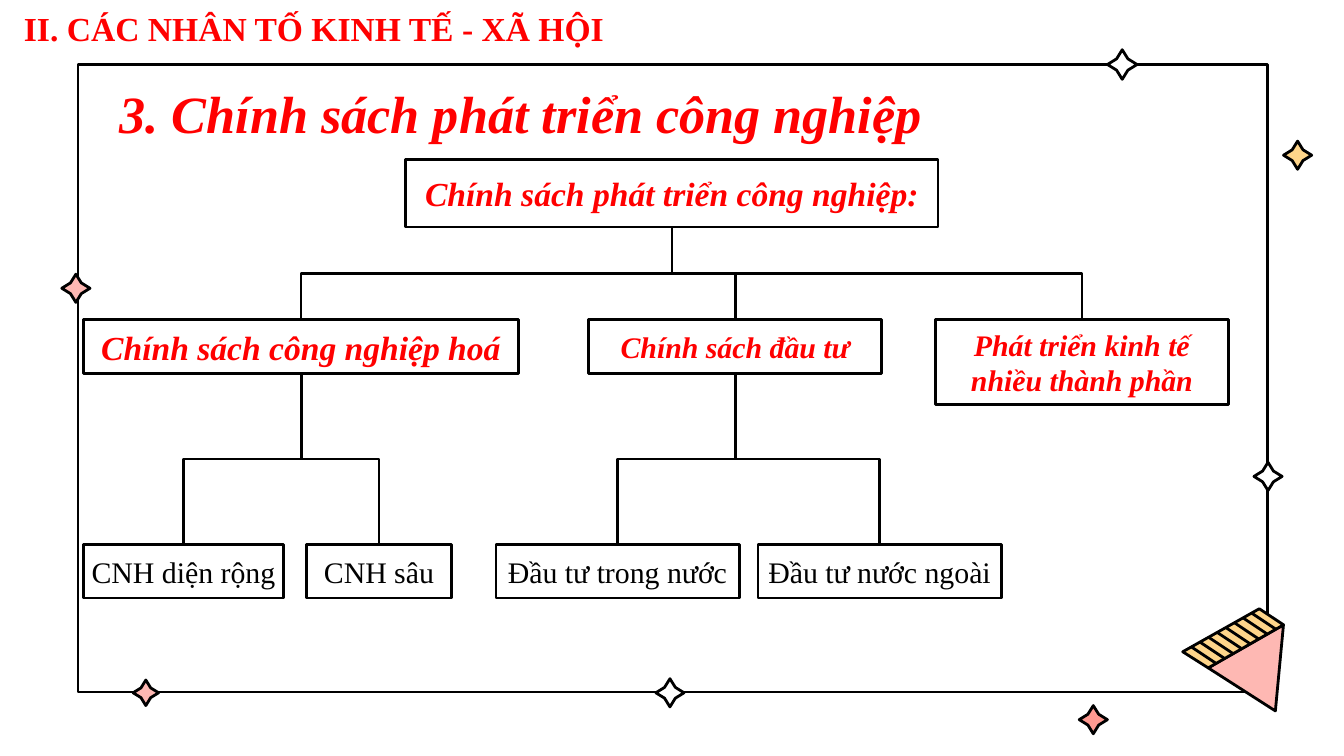
import lxml.etree
import pptx
import pptx.dml.color
import pptx.enum.shapes
import pptx.enum.text
import pptx.oxml.ns
import pptx.util

PX = 9144  # EMU per px, 100 px to the inch
COLORS = {"black": "000000", "white": "FFFFFF", "red": "FF0000",
          "pink": "FEB8B3", "coral": "FF9991", "yellow": "FED58A"}
SHAPE = pptx.enum.shapes.MSO_SHAPE
CONNECTOR = pptx.enum.shapes.MSO_CONNECTOR
ALIGN = pptx.enum.text.PP_ALIGN
MIDDLE = pptx.enum.text.MSO_ANCHOR.MIDDLE
LINE_WIDTH = pptx.util.Pt(1.5)


def rgb(name):
    return pptx.dml.color.RGBColor.from_string(COLORS[name])


def write(holder, text, frame_format, align, size, color, bold, italic):
    frame = holder.text_frame
    for key, value in frame_format.items():
        setattr(frame, key, value)
    paragraph = frame.paragraphs[0]
    paragraph.alignment = align
    run = paragraph.add_run()
    run.text = text
    font_format = {"name": "Times New Roman", "size": pptx.util.Pt(size),
                   "bold": bold, "italic": italic}
    for key, value in font_format.items():
        setattr(run.font, key, value)
    run.font.color.rgb = rgb(color)


deck = pptx.Presentation()
deck.slide_width = 1000 * PX
deck.slide_height = deck.slide_width * 9 // 16
slide = deck.slides.add_slide(deck.slide_layouts[5])
shapes = slide.shapes

# Frame and sparkles: left, top, size, fill
ornaments = [(SHAPE.RECTANGLE, 58, 48, 885, 467, "white")]
ornaments += [(SHAPE.STAR_4_POINT, left, top, size, size, fill)
              for left, top, size, fill in [
                  (99, 506, 19, "pink"), (46, 204, 21, "pink"),
                  (803, 525, 21, "coral"), (933, 344, 21, "white"),
                  (488, 505, 21, "white"), (955, 105, 21, "yellow"),
                  (824, 37, 22, "white")]]
for preset, left, top, width, height, fill in ornaments:
    ornament = shapes.add_shape(preset, left * PX, top * PX, width * PX, height * PX)
    if preset == SHAPE.STAR_4_POINT:
        ornament.adjustments[0] = 0.27
    ornament.shadow.inherit = False
    ornament.fill.solid()
    ornament.fill.fore_color.rgb = rgb(fill)
    ornament.line.color.rgb = rgb("black")
    ornament.line.width = LINE_WIDTH

# Corner prism: front face, then striped side
for fill, corners in [("pink", [(899, 497), (955, 465), (949, 529)]),
                      ("yellow", [(880, 485), (937, 453), (955, 465), (899, 497)])]:
    builder = shapes.build_freeform(*corners[0], scale=PX)
    builder.add_line_segments(corners[1:], close=True)
    face = builder.convert_to_shape()
    face.shadow.inherit = False
    face.fill.solid()
    face.fill.fore_color.rgb = rgb(fill)
    face.line.color.rgb = rgb("black")
    face.line.width = LINE_WIDTH

lines = []
for step in range(8):
    x, y = 931 - 6.4 * step, 456 + 3.6 * step
    ends = [round(length * PX) for length in (x, y, x + 18, y + 12)]
    lines.append(shapes.add_connector(CONNECTOR.STRAIGHT, *ends))

# Titles
title = shapes.title
title.left, title.top, title.width, title.height = 79 * PX, 49 * PX, 843 * PX, 63 * PX
shapes.element.append(title.element)  # in front of the frame
inset = 10 * PX
padded = {"word_wrap": True, "vertical_anchor": MIDDLE, "margin_left": inset,
          "margin_right": inset, "margin_top": inset, "margin_bottom": inset}
write(title, "3. Chính sách phát triển công nghiệp", padded, ALIGN.LEFT, 28, "red", True, True)
title.text_frame.paragraphs[0].line_spacing = 1.15

section = shapes.add_textbox(8 * PX, 1 * PX, 540 * PX, 40 * PX)
section.fill.solid()
section.fill.fore_color.rgb = rgb("white")
write(section, "II. CÁC NHÂN TỐ KINH TẾ - XÃ HỘI", {"word_wrap": True},
      ALIGN.LEFT, 18, "red", True, False)

# Policy tree: key, parent, left, top, width, height, font size, text
policies = [
    ("root", None, 302, 119, 396, 50, 18, "Chính sách phát triển công nghiệp:"),
    ("industry", "root", 62, 238, 324, 40, 18, "Chính sách công nghiệp hoá"),
    ("invest", "root", 438, 238, 218, 40, 16, "Chính sách đầu tư"),
    ("sectors", "root", 696, 238, 218, 63, 16, "Phát triển kinh tế nhiều thành phần"),
    ("wide", "industry", 62, 405, 149, 40, 16, "CNH diện rộng"),
    ("deep", "industry", 228, 405, 108, 40, 16, "CNH sâu"),
    ("domestic", "invest", 369, 405, 181, 40, 16, "Đầu tư trong nước"),
    ("foreign", "invest", 564, 405, 181, 40, 16, "Đầu tư nước ngoài"),
]
boxes = {}
for key, parent, left, top, width, height, size, text in policies:
    box = shapes.add_shape(SHAPE.RECTANGLE, left * PX, top * PX, width * PX, height * PX)
    boxes[key] = box
    box.shadow.inherit = False
    box.fill.background()
    box.line.color.rgb = rgb("black")
    box.line.width = LINE_WIDTH
    leaf = parent in ("industry", "invest")
    margins = padded | {"margin_left": 0, "margin_right": 0} if leaf else padded
    write(box, text, margins, ALIGN.CENTER, size, "black" if leaf else "red",
          not leaf, not leaf)
    if parent is None:
        continue

    # Elbow from the parent's bottom to this box's top, laid flat and then turned
    above = boxes[parent]
    start_x, start_y = above.left + above.width // 2, above.top + above.height
    end_x, end_y = box.left + box.width // 2, box.top
    mid_x, mid_y = (start_x + end_x) // 2, (start_y + end_y) // 2
    half_drop, half_run = (end_y - start_y) // 2, abs(end_x - start_x) // 2
    side = 1 if end_x > start_x else -1
    elbow = shapes.add_connector(
        CONNECTOR.ELBOW, mid_x + side * half_drop, mid_y - half_run,
        mid_x - side * half_drop, mid_y + half_run)
    elbow.element.spPr.xfrm.set("rot", str((180 + 90 * side) * 60000))
    lines.append(elbow)

for line in lines:
    line.line.color.rgb = rgb("black")
    line.line.width = LINE_WIDTH
    lxml.etree.SubElement(line.element.spPr, pptx.oxml.ns.qn("a:effectLst"))

deck.save("out.pptx")
